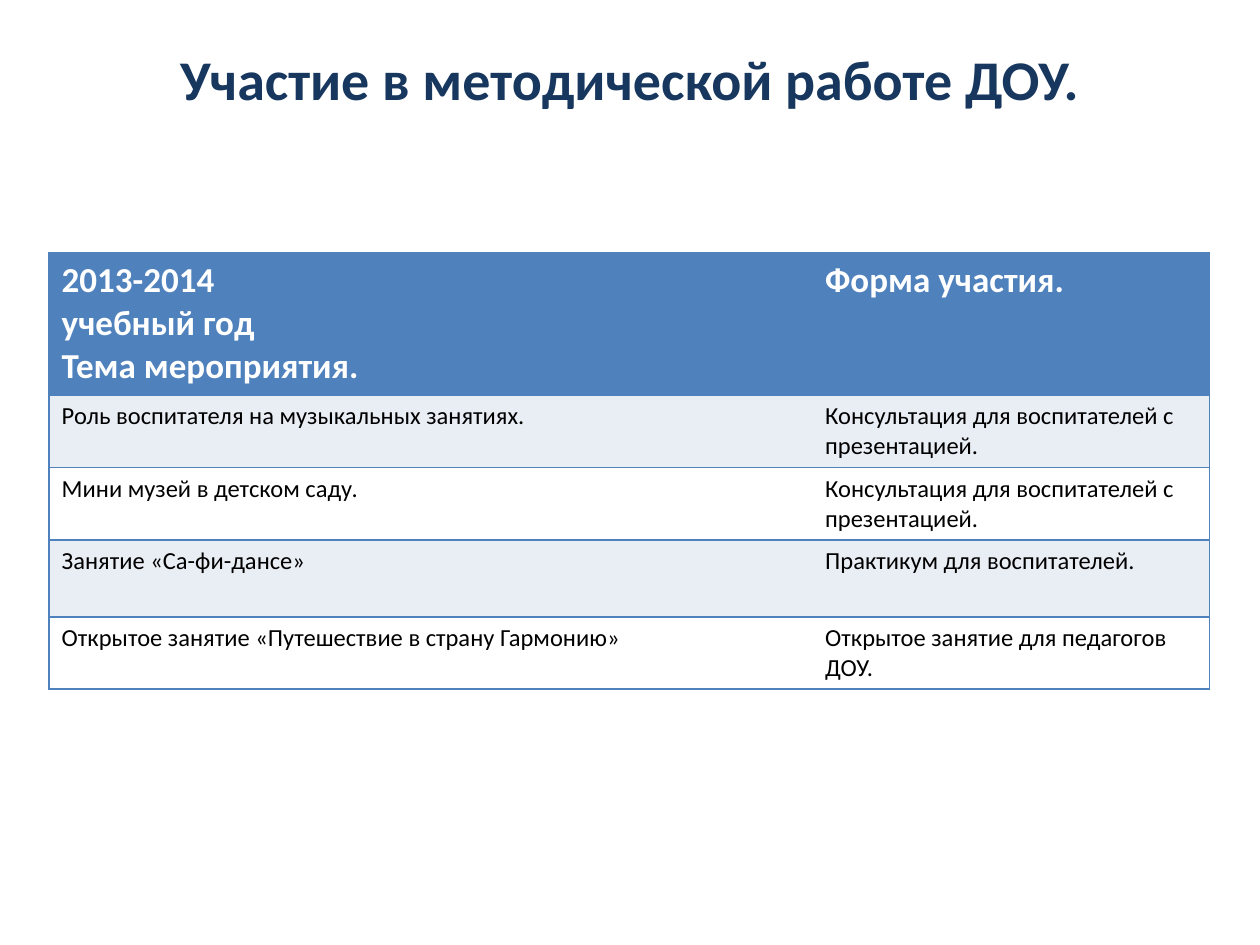
from lxml import etree
from pptx import Presentation
from pptx.dml.color import RGBColor
from pptx.enum import text
from pptx.oxml.ns import qn
from pptx.util import Cm, Pt

TITLE = "Участие в методической работе ДОУ."
ROWS = [
    ("2013-2014\nучебный год\nТема мероприятия.", "Форма участия."),
    ("Роль воспитателя на музыкальных занятиях.",
     "Консультация для воспитателей с презентацией."),
    ("Мини музей в детском саду.",
     "Консультация для воспитателей с презентацией."),
    ("Занятие «Са-фи-дансе»", "Практикум для воспитателей."),
    ("Открытое занятие «Путешествие в страну Гармонию»",
     "Открытое занятие для педагогов ДОУ."),
]
COL_WIDTHS = [15.39, 8]
ROW_HEIGHTS = [2.87, 1.45, 1.45, 1.55, 1.45]
BLUE, BAND, WHITE = "4F81BD", "E9EDF4", "FFFFFF"
TITLE_FONT = {"size": Pt(32), "bold": True, "name": "Calibri"}
HEAD_FONT = {"size": Pt(20), "bold": True, "name": "Calibri"}
BODY_FONT = {"size": Pt(14), "bold": False, "name": "Calibri"}


def rgb(value):
    return RGBColor.from_string(value)


def style(p, font, color):
    for name, value in font.items():
        setattr(p.font, name, value)
    p.font.color.rgb = rgb(color)


def set_borders(cell, sides):
    """Draw thin blue lines on the given sides; the others stay empty."""
    tc_pr = cell._tc.get_or_add_tcPr()
    for i, side in enumerate("LRTB"):
        ln = etree.Element(qn(f"a:ln{side}"), w=str(Pt(1)))
        if side in sides:
            fill = etree.SubElement(ln, qn("a:solidFill"))
            etree.SubElement(fill, qn("a:srgbClr"), val=BLUE)
        else:
            etree.SubElement(ln, qn("a:noFill"))
        tc_pr.insert(i, ln)


def add_title(s):
    title = s.shapes.title
    title.left, title.top = Cm(1.27), Cm(0.76)
    title.width, title.height = Cm(22.86), Cm(1.65)
    tf = title.text_frame
    tf.text = TITLE
    tf.vertical_anchor = text.MSO_ANCHOR.MIDDLE
    p = tf.paragraphs[0]
    p.alignment = text.PP_ALIGN.CENTER
    style(p, TITLE_FONT, "17375E")


def add_events(s):
    table = s.shapes.add_table(
        len(ROWS), len(COL_WIDTHS), Cm(0.99), Cm(5.1),
        Cm(sum(COL_WIDTHS)), Cm(sum(ROW_HEIGHTS))).table
    for column, width in zip(table.columns, COL_WIDTHS):
        column.width = Cm(width)
    for r, (row, height) in enumerate(zip(table.rows, ROW_HEIGHTS)):
        row.height = Cm(height)
        fill = BLUE if r == 0 else BAND if r % 2 else WHITE
        font, color = (BODY_FONT, "000000") if r else (HEAD_FONT, WHITE)
        for c, cell in enumerate(row.cells):
            cell.text = ROWS[r][c]
            cell.fill.solid()
            cell.fill.fore_color.rgb = rgb(fill)
            set_borders(cell, "TB" + "LR"[c])
            for p in cell.text_frame.paragraphs:
                style(p, font, color)


def main():
    prs = Presentation()
    prs.slide_width, prs.slide_height = Cm(25.4), Cm(19.05)
    s = prs.slides.add_slide(prs.slide_layouts[5])
    add_title(s)
    add_events(s)
    prs.save("out.pptx")


if __name__ == "__main__":
    main()
